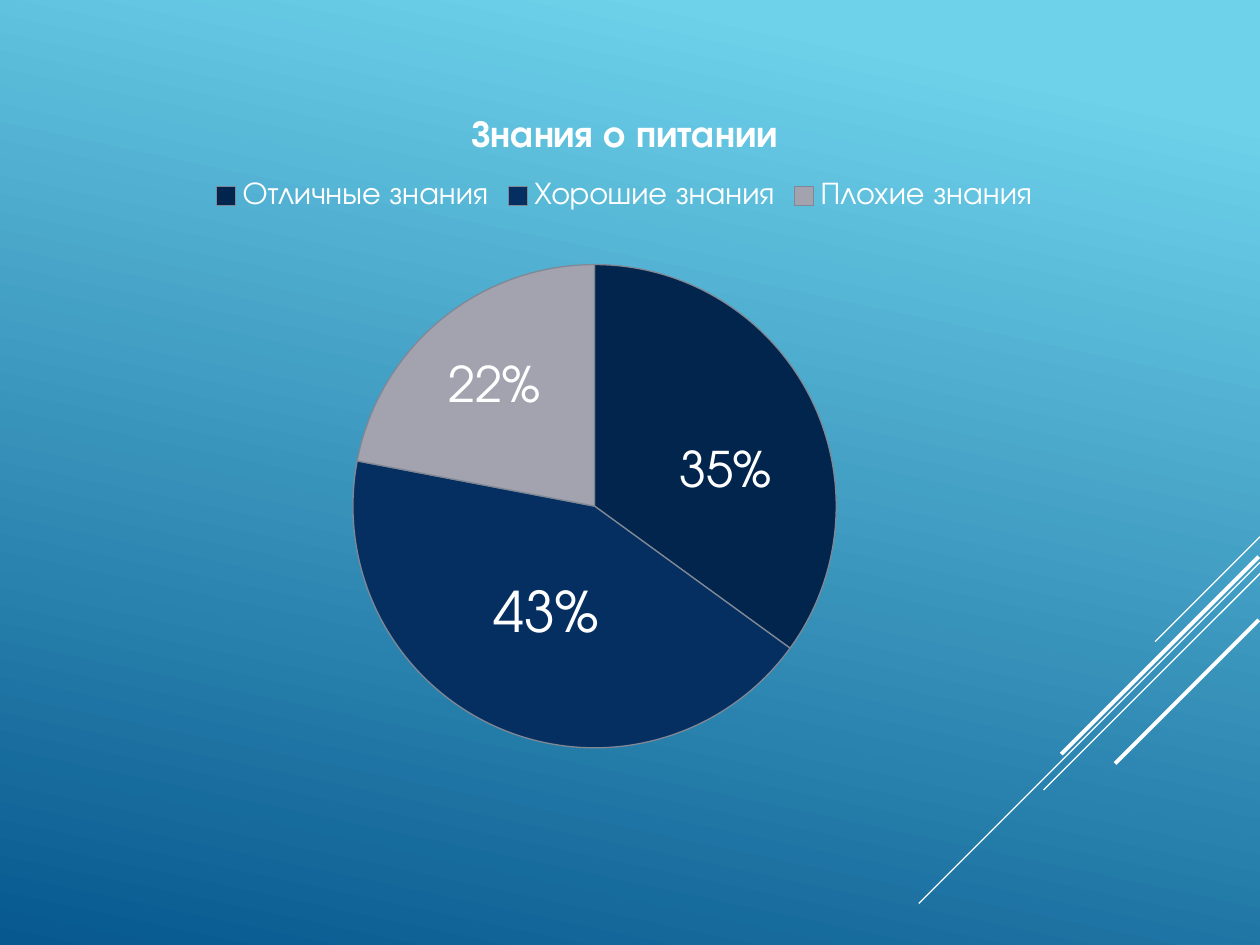
from dataclasses import dataclass

from lxml import etree
from pptx import Presentation
from pptx.chart.data import CategoryChartData
from pptx.dml.color import RGBColor
from pptx.enum import chart as charts, shapes
from pptx.oxml import ns
from pptx.util import Inches, Pt

WIDTH, HEIGHT = Inches(10), Inches(7.5)
WHITE = RGBColor(0xFF, 0xFF, 0xFF)
SKY = RGBColor(0x6E, 0xD2, 0xEB)
DEEP_BLUE = RGBColor(0x06, 0x58, 0x8E)
MIDNIGHT = RGBColor(0x02, 0x25, 0x4D)
NAVY = RGBColor(0x05, 0x2F, 0x61)
SILVER = RGBColor(0xA2, 0xA3, 0xAF)
OUTLINE = RGBColor(0x80, 0x88, 0x96)
FONT = "TeX Gyre Adventor"
TOPIC = "Знания о питании"


@dataclass(frozen=True)
class Ray:
    right: float
    top: float
    drop: float
    weight: float


@dataclass(frozen=True)
class Grade:
    name: str
    percent: int
    color: RGBColor
    label_size: int
    label_shift: tuple[float, float]


RAYS = (
    Ray(1, 0.568, 0.111, 0.75),
    Ray(1, 0.595, 0.361, 0.75),
    Ray(1, 0.607, 0.229, 0.75),
    Ray(0.999, 0.589, 0.209, 2.25),
    Ray(0.999, 0.656, 0.152, 2.25),
)
GRADES = (
    Grade("Отличные знания", 35, MIDNIGHT, 28, (0.02, 0.03)),
    Grade("Хорошие знания", 43, NAVY, 32, (0, 0)),
    Grade("Плохие знания", 22, SILVER, 28, (-0.02, -0.03)),
)


def paint_background(slide) -> None:
    fill = slide.background.fill
    fill.gradient()
    fill.gradient_angle = 258
    for stop, color, position in zip(
        fill.gradient_stops, (SKY, DEEP_BLUE), (0.1, 1)
    ):
        stop.color.rgb = color
        stop.position = position


def draw_ray(slide, ray: Ray) -> None:
    right, top = int(WIDTH * ray.right), int(HEIGHT * ray.top)
    drop = int(HEIGHT * ray.drop)
    line = slide.shapes.add_connector(
        shapes.MSO_CONNECTOR.STRAIGHT, right, top, right - drop, top + drop
    )
    line.line.color.rgb = WHITE
    line.line.width = Pt(ray.weight)
    etree.SubElement(line._element.spPr, ns.qn("a:effectLst"))


def add_layout(parent, index: int, **settings) -> None:
    for old in parent.findall(ns.qn("c:layout")):
        parent.remove(old)
    layout = etree.Element(ns.qn("c:layout"))
    manual = etree.SubElement(layout, ns.qn("c:manualLayout"))
    for tag, value in settings.items():
        etree.SubElement(manual, ns.qn(f"c:{tag}")).set("val", str(value))
    parent.insert(index, layout)


def style_font(font, size: float, bold: bool = False) -> None:
    font.name = FONT
    font.size = Pt(size)
    font.bold = bold
    font.color.rgb = WHITE


def style_slice(series, index: int, grade: Grade) -> None:
    point = series.points[index]
    point.format.fill.solid()
    point.format.fill.fore_color.rgb = grade.color
    point.format.line.color.rgb = OUTLINE
    point.format.line.width = Pt(0.75)
    style_font(point.data_label.font, grade.label_size)
    point.data_label.position = charts.XL_LABEL_POSITION.CENTER
    label = series._element.xpath(f"c:dLbls/c:dLbl[c:idx/@val='{index}']")[0]
    label.find(ns.qn("c:showVal")).set("val", "0")
    label.find(ns.qn("c:showPercent")).set("val", "1")
    if any(grade.label_shift):
        x, y = grade.label_shift
        add_layout(label, 1, x=x, y=y)


def draw_pie(slide) -> None:
    data = CategoryChartData()
    data.categories = [grade.name for grade in GRADES]
    data.add_series(TOPIC, [grade.percent for grade in GRADES])
    pie = slide.shapes.add_chart(
        charts.XL_CHART_TYPE.PIE,
        int(WIDTH * 0.035), int(HEIGHT * 0.091),
        int(WIDTH * 0.921), int(HEIGHT * 0.829), data,
    ).chart
    style_font(pie.font, 18)
    pie.has_title = True
    heading = pie.chart_title.text_frame.paragraphs[0]
    heading.text = TOPIC
    style_font(heading.font, 21.6, bold=True)
    pie.has_legend = True
    pie.legend.position = charts.XL_LEGEND_POSITION.TOP
    pie.legend.include_in_layout = False
    style_font(pie.legend.font, 18)

    plot = pie.plots[0]
    plot.vary_by_categories = True
    plot.has_data_labels = True
    plot.data_labels.show_percentage = True
    plot.data_labels.show_value = False
    for index, grade in enumerate(GRADES):
        style_slice(plot.series[0], index, grade)
    add_layout(
        pie.element.xpath("c:chart/c:plotArea")[0], 0,
        layoutTarget="inner", xMode="edge", yMode="edge",
        x=0.266, y=0.228, w=0.417, h=0.617,
    )


def main() -> None:
    deck = Presentation()
    deck.slide_width, deck.slide_height = WIDTH, HEIGHT
    slide = deck.slides.add_slide(deck.slide_layouts[6])
    paint_background(slide)
    for ray in RAYS:
        draw_ray(slide, ray)
    draw_pie(slide)
    deck.save("out.pptx")


if __name__ == "__main__":
    main()
